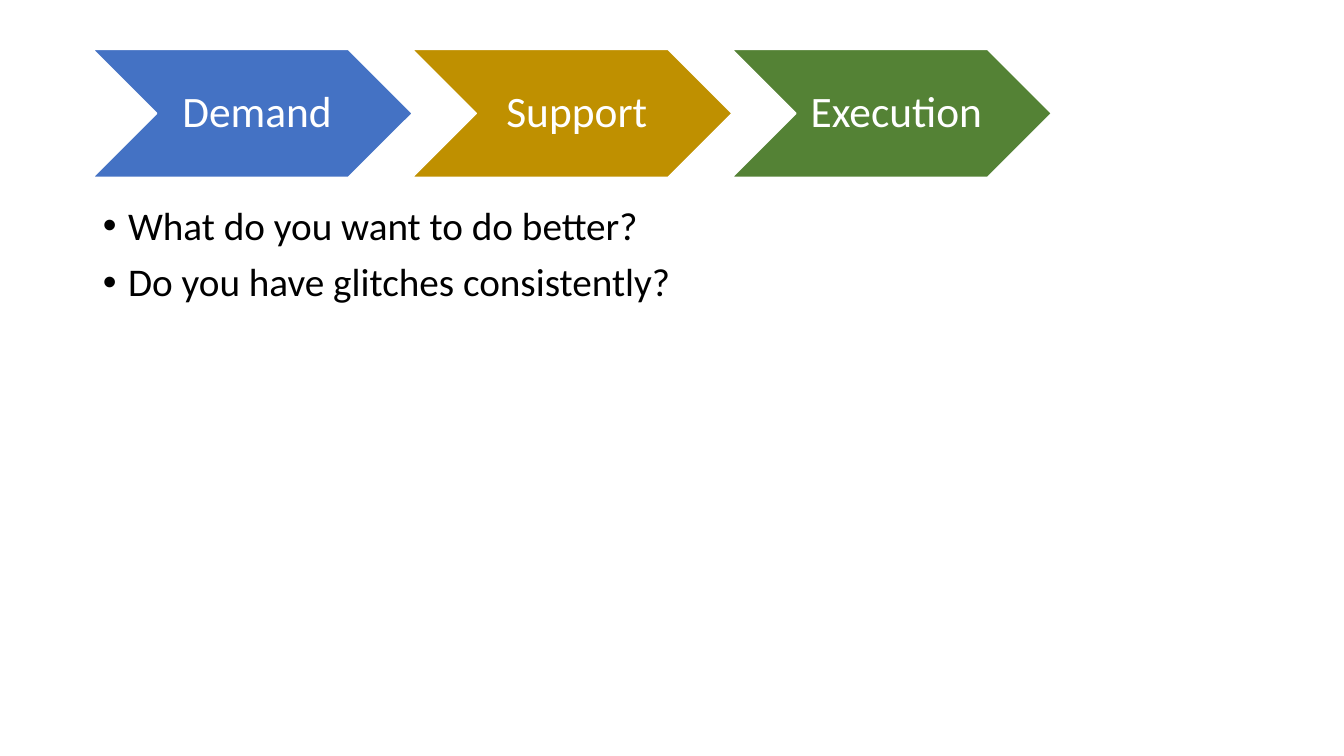
from pptx import Presentation
from pptx.dml.color import RGBColor
from pptx.enum.shapes import MSO_SHAPE
from pptx.enum.text import MSO_ANCHOR, PP_ALIGN
from pptx.util import Inches, Pt

CHEVRON = MSO_SHAPE.CHEVRON
MIDDLE, TOP = MSO_ANCHOR.MIDDLE, MSO_ANCHOR.TOP
CENTER, LEFT = PP_ALIGN.CENTER, PP_ALIGN.LEFT

FONT = "Calibri"
COLORS = {
    "demand": "4472C4",
    "support": "BF9000",
    "execution": "548235",
    "white": "FFFFFF",
    "black": "000000",
}

# Grid in inches
SLIDE_WIDTH, SLIDE_HEIGHT = 13.33, 7.5
MARGIN = 0.92
STEP_TOP, STEP_WIDTH, STEP_HEIGHT = 0.49, 3.17, 1.27
BODY_TOP, BODY_HEIGHT = 2, 4.76
BULLET_INDENT = 0.25

STEPS = ["Demand", "Support", "Execution"]
QUESTIONS = ["What do you want to do better?", "Do you have glitches consistently?"]


def color(name):
    return RGBColor.from_string(COLORS[name])


def format_paragraph(paragraph, size, color_name, alignment):
    paragraph.alignment = alignment
    paragraph.line_spacing = 0.9
    paragraph.font.name = FONT
    paragraph.font.size = Pt(size)
    paragraph.font.color.rgb = color(color_name)


def add_step(slide, column, label):
    """Add one chevron of the process, placed by its column."""
    shape = slide.shapes.add_shape(
        CHEVRON, Inches(MARGIN + column * STEP_WIDTH), Inches(STEP_TOP),
        Inches(STEP_WIDTH), Inches(STEP_HEIGHT))
    shape.shadow.inherit = False
    shape.fill.solid()
    shape.fill.fore_color.rgb = color(label.lower())
    shape.line.color.rgb = color("white")
    shape.line.width = Pt(1)

    frame = shape.text_frame
    frame.word_wrap = False
    frame.vertical_anchor = MIDDLE
    frame.margin_left = Inches(0.14)
    frame.margin_right = frame.margin_top = frame.margin_bottom = Inches(0.05)
    frame.text = label
    format_paragraph(frame.paragraphs[0], 31, "white", CENTER)


def fill_body(body, items):
    """Place the body and write its bulleted list."""
    body.left, body.top = Inches(MARGIN), Inches(BODY_TOP)
    body.width = Inches(SLIDE_WIDTH - 2 * MARGIN)
    body.height = Inches(BODY_HEIGHT)
    frame = body.text_frame
    frame.vertical_anchor = TOP
    frame.text = "\n".join(items)
    for paragraph in frame.paragraphs:
        format_paragraph(paragraph, 28, "black", LEFT)
        paragraph.space_before = Pt(10)
        # Hanging indent for the bullet
        properties = paragraph._p.get_or_add_pPr()
        properties.set("marL", str(Inches(BULLET_INDENT)))
        properties.set("indent", str(-Inches(BULLET_INDENT)))


def main():
    presentation = Presentation()
    presentation.slide_width = Inches(SLIDE_WIDTH)
    presentation.slide_height = Inches(SLIDE_HEIGHT)
    slide = presentation.slides.add_slide(presentation.slide_layouts[1])

    # The chevrons take the place of the title
    title = slide.shapes.title.element
    title.getparent().remove(title)

    # Questions
    fill_body(slide.placeholders[1], QUESTIONS)

    # Process steps
    for column, label in enumerate(STEPS):
        add_step(slide, column, label)

    presentation.save("out.pptx")


if __name__ == "__main__":
    main()
